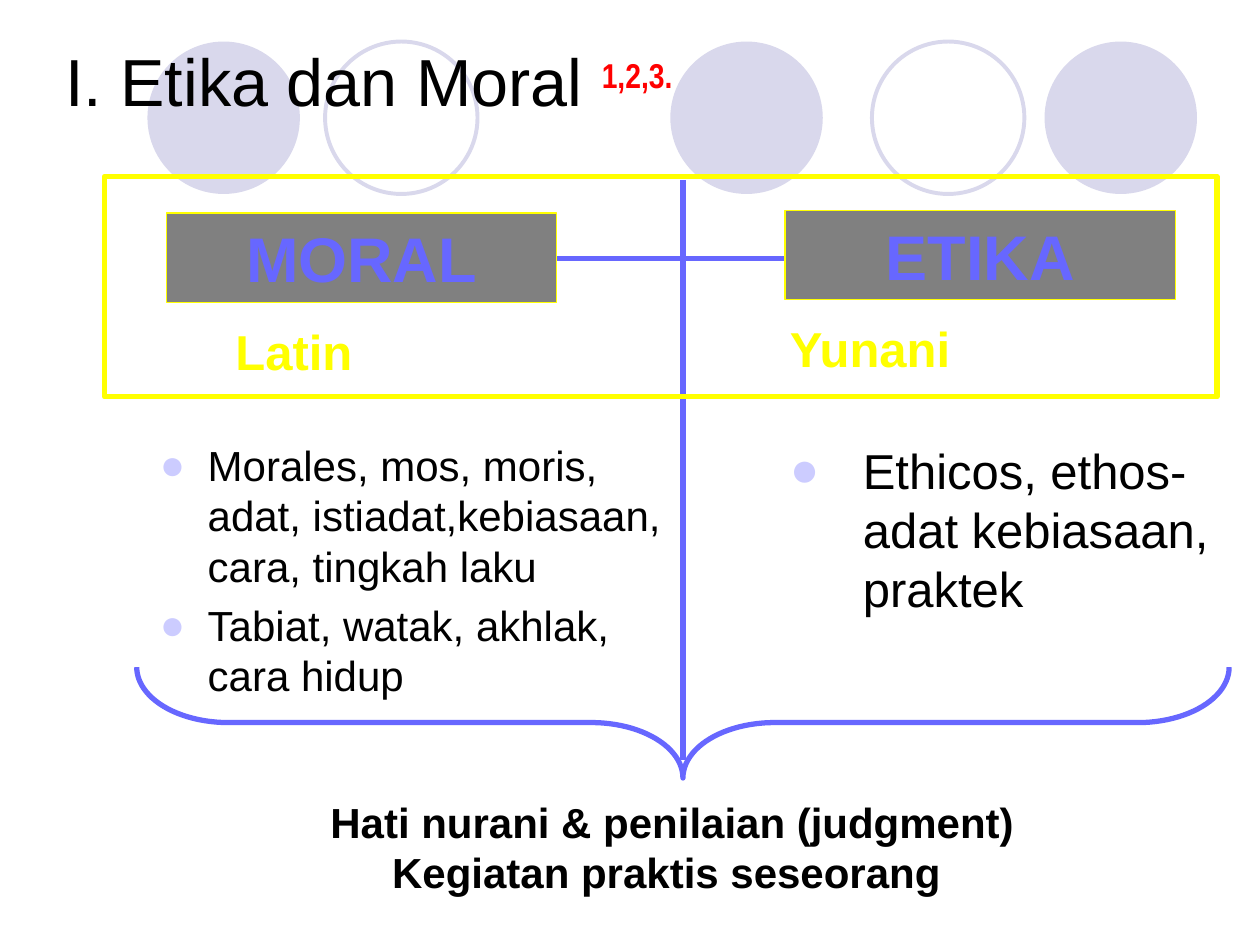
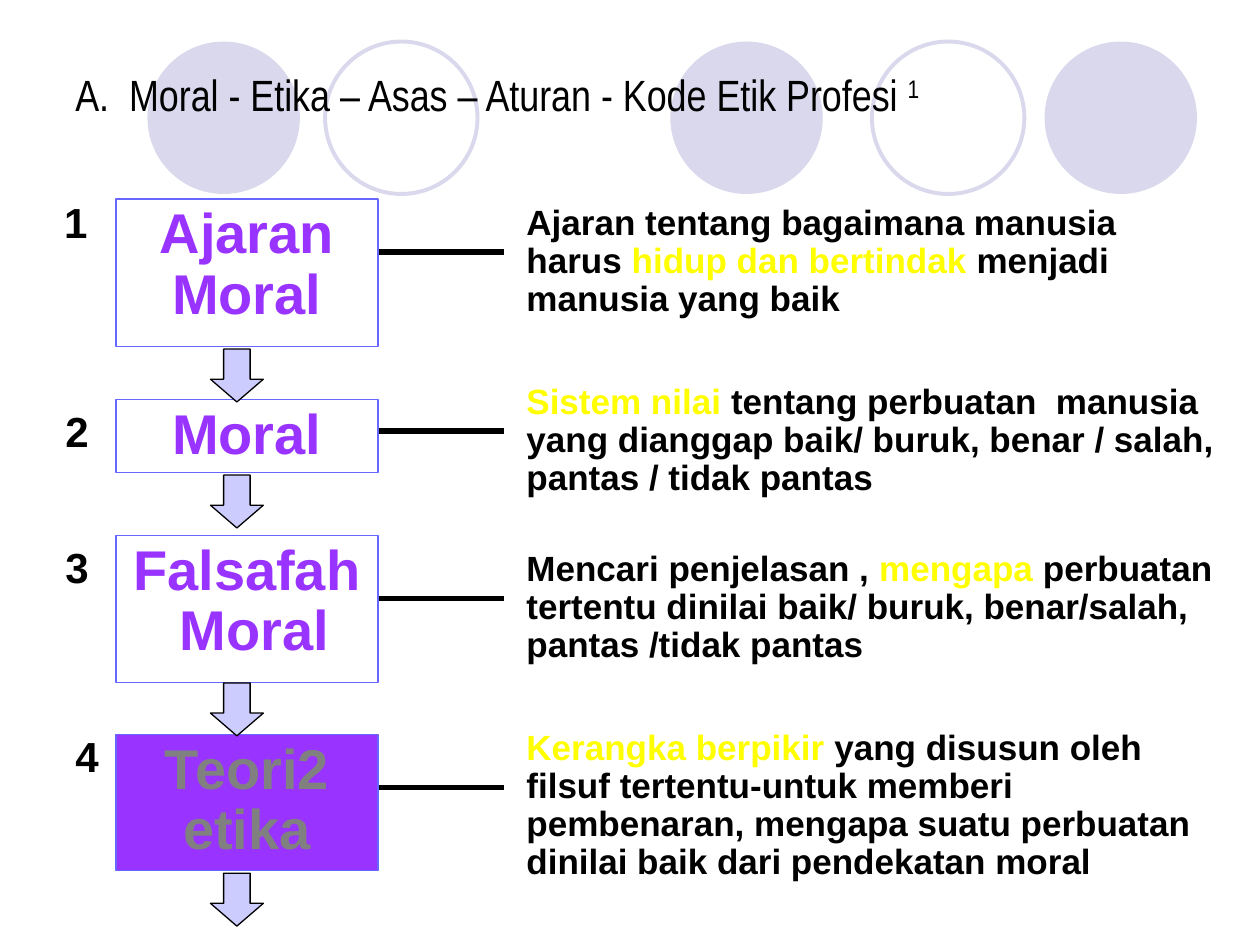
from collections import namedtuple

from lxml import etree
from pptx import Presentation
from pptx import util as u
from pptx.dml.color import RGBColor
from pptx.enum import shapes, text
from pptx.oxml import ns

BLACK, WHITE, GRAY = "000000", "FFFFFF", "808080"
YELLOW, RED, BLUE, PURPLE = "FFFF00", "FF0000", "6767FF", "9933FF"
LILAC, PALE = "CCCCFF", "D9D8EC"
SHAPE, ALIGN, ANCHOR = shapes.MSO_SHAPE, text.PP_ALIGN, text.MSO_ANCHOR

Box = namedtuple("Box", "left top width height")
Run = namedtuple("Run", "words size color bold font raised",
                 defaults=(BLACK, False, "Arial", False))
Step = namedtuple("Step", "number number_at name box fill color "
                          "line_y note_top note_height note arrow_top")


def rgb(value):
    return RGBColor.from_string(value)


def inches(box):
    return [u.Inches(length) for length in box]


def add_shape(slide, kind, box, fill=None, line=None, weight=0.75):
    shape = slide.shapes.add_shape(kind, *inches(box))
    shape.shadow.inherit = False
    if fill:
        shape.fill.solid()
        shape.fill.fore_color.rgb = rgb(fill)
    else:
        shape.fill.background()
    if line:
        shape.line.color.rgb = rgb(line)
        shape.line.width = u.Pt(weight)
    else:
        shape.line.fill.background()
    return shape


def add_line(slide, start, end, color):
    connector = slide.shapes.add_connector(
        shapes.MSO_CONNECTOR.STRAIGHT, *inches(start), *inches(end))
    connector.line.color.rgb = rgb(color)
    connector.line.width = u.Pt(3)
    properties = connector._element.spPr
    etree.SubElement(properties, ns.qn("a:effectLst"))


def add_text_box(slide, box, wrap=True):
    shape = slide.shapes.add_textbox(*inches(box))
    shape.text_frame.word_wrap = wrap
    return shape


def write(shape, paragraphs, align=ALIGN.LEFT, anchor=ANCHOR.TOP,
          line_spacing=None, before=0):
    """Write lists of runs, one list for each paragraph."""
    frame = shape.text_frame
    frame.vertical_anchor = anchor
    for index, runs in enumerate(paragraphs):
        paragraph = frame.add_paragraph() if index else frame.paragraphs[0]
        paragraph.alignment = align
        paragraph.space_before = u.Pt(before)
        if line_spacing:
            paragraph.line_spacing = line_spacing
        for part in runs:
            run = paragraph.add_run()
            run.text = part.words
            run.font.size = u.Pt(part.size)
            run.font.name = part.font
            run.font.bold = part.bold
            run.font.color.rgb = rgb(part.color)
            if part.raised:
                run.font._element.set("baseline", "30000")
    return frame.paragraphs


def set_indent(paragraph, margin, first=0):
    properties = paragraph._p.get_or_add_pPr()
    properties.set("marL", str(u.Inches(margin)))
    properties.set("indent", str(u.Inches(first)))
    return properties


def add_bullet(paragraph, margin):
    properties = set_indent(paragraph, margin, -margin)
    color = etree.SubElement(properties, ns.qn("a:buClr"))
    etree.SubElement(color, ns.qn("a:srgbClr"), val=LILAC)
    etree.SubElement(properties, ns.qn("a:buFont"), typeface="Arial")
    etree.SubElement(properties, ns.qn("a:buChar"), char="●")


# Shared slide base: row of circles and the title
def add_base(presentation, title_box, title_runs):
    slide = presentation.slides.add_slide(presentation.slide_layouts[6])
    slide.background.fill.solid()
    slide.background.fill.fore_color.rgb = rgb(WHITE)
    for left in (5.32, 8.29, 1.17):
        add_shape(slide, SHAPE.OVAL, Box(left, 0.33, 1.21, 1.21), fill=PALE)
    for left in (6.92, 2.58):
        add_shape(slide, SHAPE.OVAL, Box(left, 0.33, 1.21, 1.21), line=PALE, weight=2.25)
    title = add_text_box(slide, title_box)
    write(title, [title_runs], anchor=ANCHOR.MIDDLE)
    return slide


# Column with the language of origin and its meanings
def add_origin(slide, box, language, indent, bullets, size, gap, margin):
    paragraphs = write(
        add_text_box(slide, box),
        [[Run(language, 28, YELLOW, True)]] + [[Run(words, size)] for words in bullets],
        before=5)
    set_indent(paragraphs[0], indent)
    paragraphs[1].space_before = u.Pt(gap)
    for paragraph in paragraphs[1:]:
        add_bullet(paragraph, margin)


def add_term(slide, box, term):
    shape = add_shape(slide, SHAPE.RECTANGLE, box, GRAY, YELLOW)
    write(shape, [[Run(term, 36, BLUE, True)]], ALIGN.CENTER, ANCHOR.MIDDLE)


def build_comparison(presentation):
    slide = add_base(presentation, Box(0.42, 0.17, 9.17, 0.92), [
        Run("I. Etika dan Moral ", 38),
        Run("1,2,3.", 34, RED, True, "Arial Narrow", True)])

    add_origin(slide, Box(1.17, 2.5, 4.25, 3.2), "Latin", 0.6,
               ["Morales, mos, moris, adat, istiadat,kebiasaan, cara, tingkah laku",
                "Tabiat, watak, akhlak, cara hidup"], 24, 34, 0.38)
    add_origin(slide, Box(6.17, 2.48, 3.83, 2.5), "Yunani", 0,
               ["Ethicos, ethos-adat kebiasaan, praktek"], 28, 36, 0.58)

    # Brace and dividing lines
    brace = add_shape(slide, SHAPE.RIGHT_BRACE, Box(4.98, 1.4, 0.88, 8.67),
                      line=BLUE, weight=3)
    brace.rotation = 90
    brace.adjustments[0] = 0.825
    brace.adjustments[1] = 0.5
    add_line(slide, (5.42, 1.43), (5.42, 6.03), BLUE)
    add_line(slide, (4.42, 2.05), (6.33, 2.05), BLUE)

    # Frame with the two terms
    add_shape(slide, SHAPE.RECTANGLE, Box(0.83, 1.4, 8.83, 1.75), line=YELLOW, weight=3)
    add_term(slide, Box(6.23, 1.67, 3.1, 0.71), "ETIKA")
    add_term(slide, Box(1.32, 1.69, 3.1, 0.71), "MORAL")

    # Conclusion under the brace
    write(add_text_box(slide, Box(2.5, 6.27, 5.67, 0.9)),
          [[Run("Hati nurani & penilaian (judgment)", 24, bold=True)],
           [Run("Kegiatan praktis seseorang ", 24, bold=True)]], ALIGN.CENTER)


# One step: number, named box, explanation and arrow
def add_step(slide, step):
    box = step.box
    add_line(slide, (2.75, step.line_y), (4, step.line_y), BLACK)
    name = add_shape(slide, SHAPE.RECTANGLE, box, step.fill, BLUE)
    write(name, [[Run(step.name, 32, step.color, True)]], ALIGN.CENTER,
          line_spacing=0.9, before=6.4)
    note_box = Box(4.08, step.note_top, 5.67, step.note_height)
    note = add_shape(slide, SHAPE.RECTANGLE, note_box, WHITE)
    write(note, [[Run(words, 20, color, True) for words, color in step.note]],
          line_spacing=0.9, before=4)
    number = add_text_box(slide, Box(*step.number_at, 0.39, 0.5), wrap=False)
    write(number, [[Run(step.number, 24, bold=True)]])


def add_arrow(slide, top):
    arrow = add_shape(slide, SHAPE.DOWN_ARROW, Box(1.67, top, 0.42, 0.42), LILAC, BLACK)
    arrow.adjustments[0] = 0.5
    arrow.adjustments[1] = 0.43


STEPS = [
    Step("1", (0.41, 1.51), "Ajaran Moral", Box(0.92, 1.58, 2.08, 1.17), WHITE, PURPLE,
         2, 1.58, 1.17,
         [("Ajaran tentang bagaimana manusia harus ", BLACK),
          ("hidup dan bertindak", YELLOW),
          (" menjadi manusia yang baik", BLACK)], 2.77),
    Step("2", (0.42, 3.17), "Moral", Box(0.92, 3.17, 2.08, 0.58), WHITE, PURPLE,
         3.42, 3, 1,
         [("Sistem nilai", YELLOW),
          (" tentang perbuatan  manusia yang dianggap baik/ buruk, "
           "benar / salah, pantas / tidak pantas", BLACK)], 3.77),
    Step("3", (0.42, 4.25), "Falsafah  Moral", Box(0.92, 4.25, 2.08, 1.17), WHITE, PURPLE,
         4.75, 4.33, 1,
         [("Mencari penjelasan , ", BLACK), ("mengapa ", YELLOW),
          ("perbuatan tertentu dinilai baik/ buruk, benar/salah, "
           "pantas /tidak pantas", BLACK)], 5.42),
    Step("4", (0.5, 5.75), "Teori2 etika", Box(0.92, 5.83, 2.08, 1.08), PURPLE, GRAY,
         6.25, 5.75, 1.33,
         [("Kerangka berpikir ", YELLOW),
          ("yang disusun oleh filsuf tertentu-untuk memberi pembenaran, "
           "mengapa suatu perbuatan dinilai baik dari pendekatan moral", BLACK)], 6.93),
]


def build_steps(presentation):
    slide = add_base(presentation, Box(0.5, 0.17, 9.5, 1.15), [
        Run("A.  Moral - Etika – Asas – Aturan - Kode Etik Profesi ", 25,
            font="Arial Narrow"),
        Run("1", 25, font="Arial Narrow", raised=True)])
    for step in STEPS:
        add_step(slide, step)
    for step in STEPS:
        add_arrow(slide, step.arrow_top)


def main():
    presentation = Presentation()
    presentation.slide_width = u.Inches(10)
    presentation.slide_height = u.Inches(7.5)
    build_comparison(presentation)
    build_steps(presentation)
    presentation.save("out.pptx")


if __name__ == "__main__":
    main()
